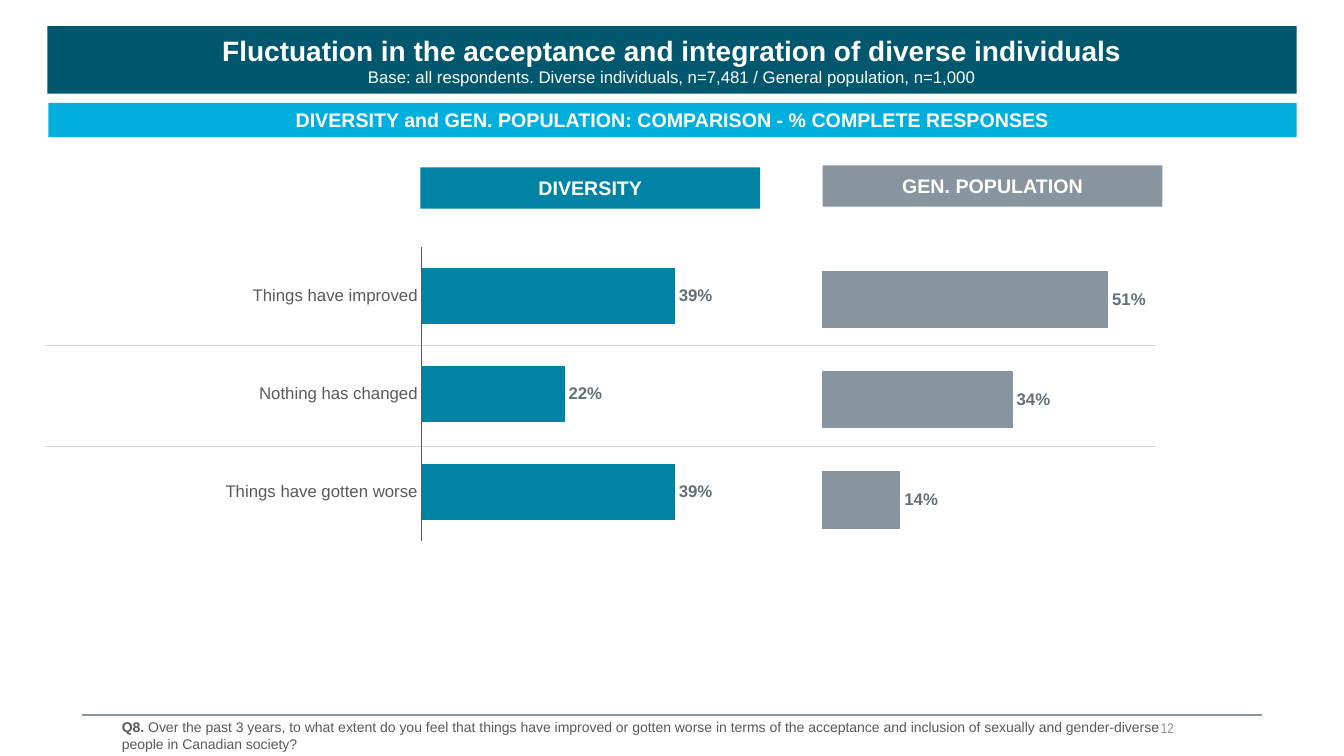
"""Build the slide comparing diverse individuals with the general population."""
from lxml import etree
from pptx import Presentation
from pptx.chart.data import CategoryChartData
from pptx.dml.color import RGBColor
from pptx.enum import chart as ch, shapes, text
from pptx.oxml import parse_xml
from pptx.oxml.ns import nsdecls, qn
from pptx.util import Inches, Pt

HUES = {"navy": "00576E", "teal": "0083A5", "sky": "00AFDC", "slate": "88959E",
        "rule": "D9D9D9", "label": "637079", "body": "595959",
        "page": "8C8C8C", "white": "FFFFFF"}

TITLE = [[("Fluctuation in the acceptance and integration of diverse individuals", 20, True)],
         [("Base: all respondents. Diverse individuals, n=7,481 / "
           "General population, n=1,000", 12, False)]]
BANNER = "DIVERSITY and GEN. POPULATION: COMPARISON - % COMPLETE RESPONSES"
NOTE = [[("Q8. ", 10, True),
         ("Over the past 3 years, to what extent do you feel that things have improved or "
          "gotten worse in terms of the acceptance and inclusion of sexually and "
          "gender-diverse people in Canadian society?", 10, False)]]
PAGE = [[("12", 10, False)]]

BARS = [
    (TITLE, (0.47, 0.26, 12.39, 0.67), "navy"),
    ([[("DIVERSITY", 14, True)]], (4.17, 1.66, 3.37, 0.41), "teal"),
    ([[("GEN. POPULATION", 14, True)]], (8.16, 1.64, 3.37, 0.41), "slate"),
    ([[(BANNER, 14, True)]], (0.48, 1.02, 12.38, 0.34), "sky"),
]
CATS = ["Things have improved", "Nothing has changed", "Things have gotten worse"]
CHARTS = [
    {"box": (5.64, 2.46, 6.2, 3.11), "vals": (0.51, 0.34, 0.14), "hue": "slate",
     "top": 0.6, "plot": (0.405, 0.005, 0.539, 0.959), "names": False},
    {"box": (0, 2.34, 7.5, 3.14), "vals": (0.39, 0.22, 0.39), "hue": "teal",
     "top": 0.45, "plot": (0.558, 0.036, 0.386, 0.927), "names": True},
]
RULES = [(0.81, 12.52, 7.09, "slate", 1.5),
         (0.45, 11.47, 3.43, "rule", 0.75),
         (0.45, 11.47, 4.43, "rule", 0.75)]


def rgb(hue):
    return RGBColor.from_string(HUES[hue])


def style(font, size, hue, bold=False, name="Arial"):
    font.size, font.bold, font.name = Pt(size), bold, name
    font.color.rgb = rgb(hue)


def write(frame, paras, hue, align, name="Arial", inset=None):
    frame.word_wrap = True
    if inset is not None:
        frame.margin_left = frame.margin_right = Inches(inset)
        frame.margin_top = frame.margin_bottom = Inches(inset)
    for i, parts in enumerate(paras):
        para = frame.add_paragraph() if i else frame.paragraphs[0]
        para.alignment = align
        for words, size, bold in parts:
            run = para.add_run()
            run.text = words
            style(run.font, size, hue, bold, name)


def add_bar(slide, paras, box, hue):
    bar = slide.shapes.add_shape(shapes.MSO_SHAPE.RECTANGLE, *map(Inches, box))
    bar.shadow.inherit = False
    bar.fill.solid()
    bar.fill.fore_color.rgb = rgb(hue)
    bar.line.fill.background()
    bar.text_frame.vertical_anchor = text.MSO_ANCHOR.MIDDLE
    write(bar.text_frame, paras, "white", text.PP_ALIGN.CENTER, inset=0)


def add_rule(slide, left, right, y, hue, width):
    line = slide.shapes.add_connector(shapes.MSO_CONNECTOR.STRAIGHT, Inches(left),
                                      Inches(y), Inches(right), Inches(y))
    line.line.color.rgb = rgb(hue)
    line.line.width = Pt(width)
    etree.SubElement(line._element.spPr, qn("a:effectLst"))


def place_plot(chart, plot):
    area = chart._chartSpace.chart.plotArea
    for old in area.findall(qn("c:layout")):
        area.remove(old)
    sizes = "".join(f'<c:{key} val="{val}"/>' for key, val in zip("xywh", plot))
    area.insert(0, parse_xml(
        f'<c:layout {nsdecls("c")}><c:manualLayout><c:layoutTarget val="inner"/>'
        f'<c:xMode val="edge"/><c:yMode val="edge"/>{sizes}'
        '</c:manualLayout></c:layout>'))


def add_bars(slide, item):
    data = CategoryChartData(number_format="0%")
    data.categories = CATS
    data.add_series("Series 1", item["vals"])
    chart = slide.shapes.add_chart(ch.XL_CHART_TYPE.BAR_CLUSTERED,
                                   *map(Inches, item["box"]), data).chart
    chart.has_legend = chart.has_title = False
    style(chart.font, 12, "body")
    place_plot(chart, item["plot"])

    vals, cats = chart.value_axis, chart.category_axis
    vals.minimum_scale, vals.maximum_scale = 0, item["top"]
    vals.has_major_gridlines = vals.visible = False
    cats.reverse_order = True
    cats.visible = item["names"]
    if item["names"]:
        cats.major_tick_mark = ch.XL_TICK_MARK.NONE
        style(cats.tick_labels.font, 12, "body")
        cats.format.line.color.rgb = rgb("body")
        cats.format.line.width = Pt(0.75)

    plot = chart.plots[0]
    plot.gap_width, plot.vary_by_categories = 75, False
    fill = plot.series[0].format.fill
    fill.solid()
    fill.fore_color.rgb = rgb(item["hue"])
    plot.has_data_labels = True
    labels = plot.data_labels
    labels.show_value = True
    labels.number_format, labels.number_format_is_linked = "0%", False
    labels.position = ch.XL_LABEL_POSITION.OUTSIDE_END
    style(labels.font, 12, "label", True)


def main():
    deck = Presentation()
    deck.slide_width, deck.slide_height = Inches(13.33), Inches(7.5)
    slide = deck.slides.add_slide(deck.slide_layouts[6])
    page = slide.shapes.add_textbox(*map(Inches, (8.73, 7.09, 2.91, 0.26))).text_frame
    page.vertical_anchor = text.MSO_ANCHOR.MIDDLE
    write(page, PAGE, "page", text.PP_ALIGN.RIGHT, "Arial Narrow", 0)
    note = slide.shapes.add_textbox(*map(Inches, (1.11, 7.08, 10.79, 0.44))).text_frame
    write(note, NOTE, "body", text.PP_ALIGN.LEFT)
    for bar in BARS:
        add_bar(slide, *bar)
    for rule in RULES:
        add_rule(slide, *rule)
    for item in CHARTS:
        add_bars(slide, item)
    deck.save("out.pptx")


if __name__ == "__main__":
    main()
